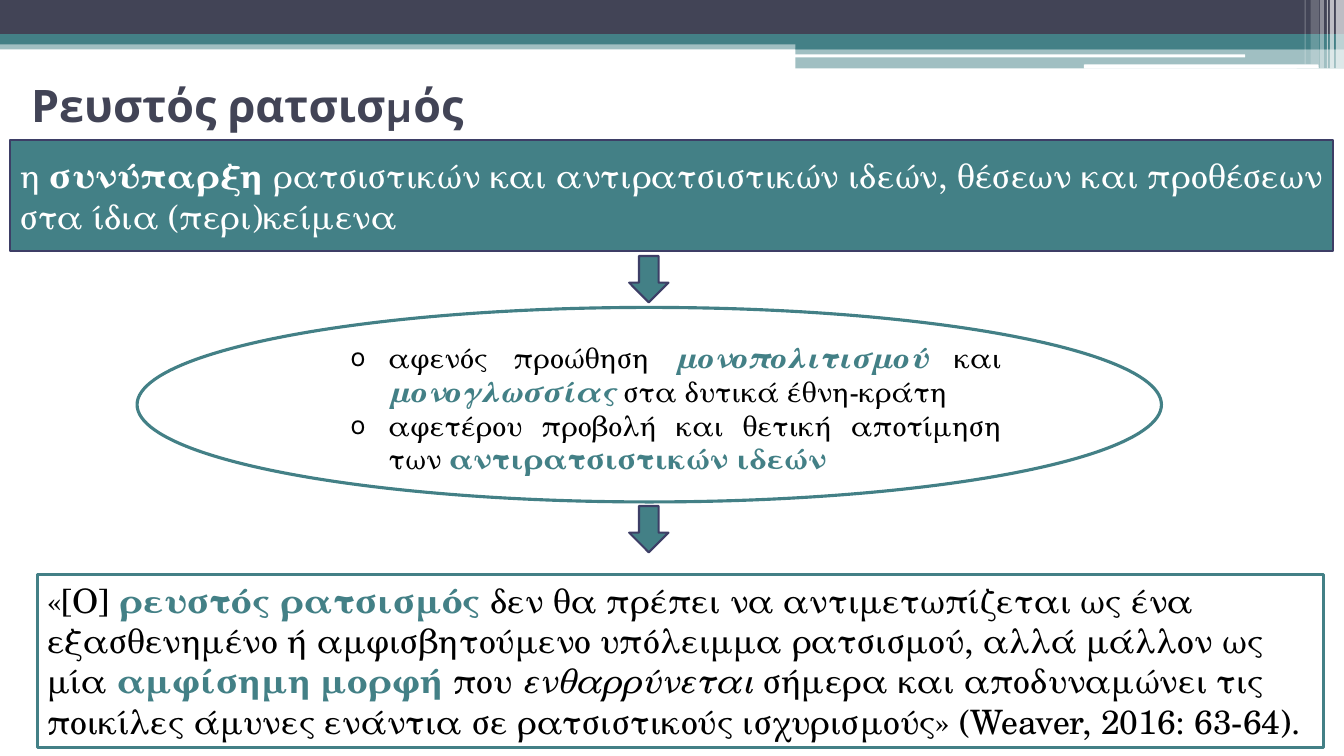
import pptx
import pptx.util
import pptx.dml.color
import pptx.enum.shapes
import pptx.enum.text
import pptx.oxml.ns
from lxml import etree

Inches = pptx.util.Inches
Pt = pptx.util.Pt
SHAPE = pptx.enum.shapes.MSO_SHAPE
ALIGN = pptx.enum.text.PP_ALIGN
ANCHOR = pptx.enum.text.MSO_ANCHOR
qn = pptx.oxml.ns.qn

TEAL, NAVY, EDGE = "438086", "424456", "3D3E66"
WHITE, BLACK = "FFFFFF", "000000"
SERIF, SANS = "TeX Gyre Schola", "Karla"


def rgb(value):
    return pptx.dml.color.RGBColor.from_string(value)


def add_box(s, kind, at, fill=None, alpha=100, line=None, width=1.5):
    sp = s.shapes.add_shape(kind, *[Inches(v) for v in at])
    sp.shadow.inherit = False
    if fill:
        sp.fill.solid()
        sp.fill.fore_color.rgb = rgb(fill)
        if alpha < 100:
            color = sp.fill._xPr.find(".//" + qn("a:srgbClr"))
            etree.SubElement(color, qn("a:alpha"), val=str(alpha * 1000))
    else:
        sp.fill.background()
    if line:
        sp.line.color.rgb = rgb(line)
        sp.line.width = Pt(width)
    else:
        sp.line.fill.background()
    return sp


def add_bullet(p, char, margin, indent):
    pPr = p._p.get_or_add_pPr()
    pPr.set("marL", str(Inches(margin)))
    pPr.set("indent", str(Inches(indent)))
    etree.SubElement(pPr, qn("a:buFont"), typeface=SANS)
    etree.SubElement(pPr, qn("a:buChar"), char=char)


def write(sp, paragraphs, size, font, anchor=ANCHOR.TOP, align=ALIGN.LEFT, bullet=None):
    """Each run is (text, colour, style), where style holds 'b' and/or 'i'."""
    tf = sp.text_frame
    tf.word_wrap = True
    tf.vertical_anchor = anchor
    for n, runs in enumerate(paragraphs):
        p = tf.add_paragraph() if n else tf.paragraphs[0]
        p.alignment = align
        if bullet:
            add_bullet(p, bullet, 0.91, -0.38)
        for text, color, style in runs:
            r = p.add_run()
            r.text = text
            r.font.size = Pt(size)
            r.font.name = font
            r.font.color.rgb = rgb(color)
            r.font.bold = "b" in style
            r.font.italic = "i" in style


def add_header(s):
    # Horizontal bands
    for at, color, alpha in [
        ((0, 0.4, 13.33, 0.09), TEAL, 50),
        ((0, 0, 13.33, 0.34), NAVY, 100),
        ((0, 0.34, 13.33, 0.1), TEAL, 100),
        ((7.89, 0.39, 5.44, 0.1), TEAL, 100),
        ((7.89, 0.48, 5.44, 0.2), TEAL, 50),
    ]:
        add_box(s, SHAPE.RECTANGLE, at, color, alpha)
    # White stripes
    for at in [(7.88, 0.54, 4.47, 0.03), (10.75, 0.64, 2.33, 0.04)]:
        add_box(s, SHAPE.ROUNDED_RECTANGLE, at, WHITE)
    # Translucent vertical bars at the right edge
    for left, width, height, alpha in [
        (13.25, 0.08, 0.68, 65), (13.19, 0.04, 0.68, 65), (13.16, 0.01, 0.68, 60),
        (13.09, 0.04, 0.68, 40), (13, 0.08, 0.64, 20), (12.94, 0.01, 0.64, 30),
    ]:
        add_box(s, SHAPE.RECTANGLE, (left, 0, width, height), WHITE, alpha)


def add_title(s, text):
    sp = s.shapes.add_textbox(Inches(0.21), Inches(0.68), Inches(12.46), Inches(0.71))
    write(sp, [[(text, NAVY, "b")]], 32, SANS, ANCHOR.MIDDLE)


def add_arrow(s, top):
    add_box(s, SHAPE.DOWN_ARROW, (6.24, top, 0.39, 0.46), TEAL, line=EDGE)


def main():
    prs = pptx.Presentation()
    prs.slide_width, prs.slide_height = Inches(13.33), Inches(7.5)
    s = prs.slides.add_slide(prs.slide_layouts[6])
    add_header(s)
    add_title(s, "Ρευστός ρατσισμός")

    # Definition
    definition = add_box(s, SHAPE.RECTANGLE, (0.1, 1.39, 13.12, 1.1), TEAL, line=EDGE)
    write(definition, [[
        ("η ", WHITE, ""),
        ("συνύπαρξη ", WHITE, "b"),
        ("ρατσιστικών και αντιρατσιστικών ιδεών, θέσεων και προθέσεων "
         "στα ίδια (περι)κείμενα", WHITE, ""),
    ]], 24, SERIF, ANCHOR.MIDDLE, ALIGN.JUSTIFY)
    add_arrow(s, 2.54)

    # The two sides
    sides = add_box(s, SHAPE.OVAL, (1.36, 3.05, 10.16, 1.93), line=TEAL, width=2.25)
    write(sides, [
        [("αφενός προώθηση ", BLACK, ""),
         ("μονοπολιτισμού", TEAL, "bi"),
         (" και ", BLACK, ""),
         ("μονογλωσσίας", TEAL, "bi"),
         (" στα δυτικά έθνη-κράτη", BLACK, "")],
        [("αφετέρου προβολή και θετική αποτίμηση των ", BLACK, ""),
         ("αντιρατσιστικών ιδεών", TEAL, "b")],
    ], 20, SERIF, align=ALIGN.JUSTIFY, bullet="o")
    add_arrow(s, 5.02)

    # Quotation
    quote = add_box(s, SHAPE.RECTANGLE, (0.37, 5.7, 12.76, 1.72), line=TEAL, width=2.25)
    write(quote, [[
        ("«[O] ", BLACK, ""),
        ("ρευστός ρατσισμός ", TEAL, "b"),
        ("δεν θα πρέπει να αντιμετωπίζεται ως ένα εξασθενημένο ή αμφισβητούμενο "
         "υπόλειμμα ρατσισμού, αλλά μάλλον ως μία ", BLACK, ""),
        ("αμφίσημη μορφή ", TEAL, "b"),
        ("που", BLACK, ""),
        (" ενθαρρύνεται ", BLACK, "i"),
        ("σήμερα και αποδυναμώνει τις ποικίλες άμυνες ενάντια σε ρατσιστικούς "
         "ισχυρισμούς» (Weaver, 2016: 63-64).", BLACK, ""),
    ]], 24, SERIF)
    quote.text_frame.auto_size = pptx.enum.text.MSO_AUTO_SIZE.SHAPE_TO_FIT_TEXT

    prs.save("out.pptx")


if __name__ == "__main__":
    main()
